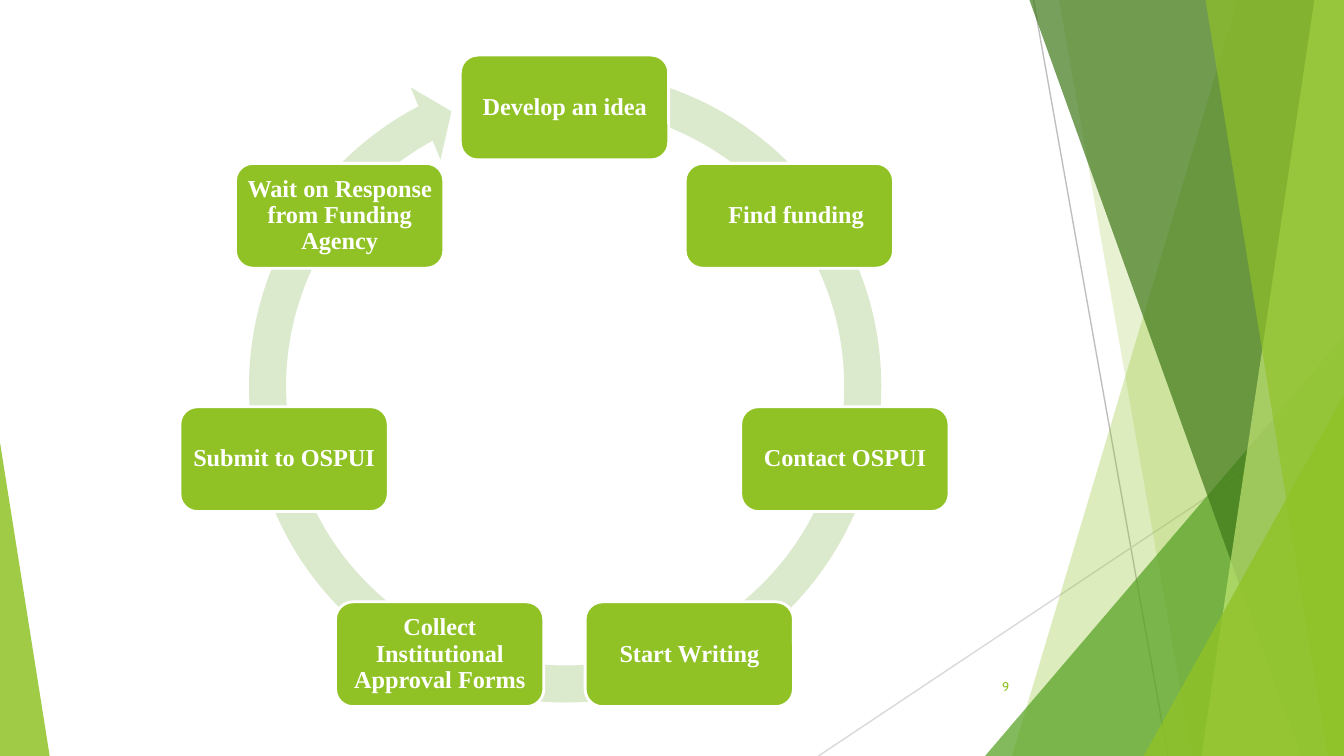
import math

from lxml import etree
from pptx import Presentation
from pptx.dml.color import RGBColor
from pptx.enum.shapes import MSO_CONNECTOR, MSO_SHAPE
from pptx.enum.text import MSO_ANCHOR, PP_ALIGN
from pptx.oxml.ns import qn
from pptx.util import Inches, Pt

STRAIGHT = MSO_CONNECTOR.STRAIGHT
TRIANGLE = MSO_SHAPE.ISOSCELES_TRIANGLE
CIRCULAR_ARROW = MSO_SHAPE.CIRCULAR_ARROW
ROUNDED = MSO_SHAPE.ROUNDED_RECTANGLE
MIDDLE = MSO_ANCHOR.MIDDLE
CENTER, RIGHT = PP_ALIGN.CENTER, PP_ALIGN.RIGHT

WIDTH = 10
HEIGHT = WIDTH * 9 / 16
LIME, GREEN, DARK_GREEN, PALE_LIME = "90C226", "54A021", "3F7819", "C0E474"
RING_GREEN, WHITE = "DBE9CD", "FFFFFF"

CENTER_X, CENTER_Y, RADIUS = 4.2, 2.94, 2.14
STEP_WIDTH, STEP_HEIGHT = 1.55, 0.78
# Label and extra left inset, clockwise from the top
STEPS = [
    ("Develop an idea", 0),
    ("Find funding", 0.1),
    ("Contact OSPUI", 0),
    ("Start Writing", 0),
    ("Collect Institutional Approval Forms", 0),
    ("Submit to OSPUI", 0),
    ("Wait on Response from Funding Agency", 0),
]


def color(hex_code):
    return RGBColor.from_string(hex_code)


def paint(shape, fill, opacity=100, outline=None):
    """Fill a shape, with an opacity in percent and an optional outline."""
    shape.shadow.inherit = False
    shape.fill.solid()
    shape.fill.fore_color.rgb = color(fill)
    if opacity < 100:
        solid = shape._element.spPr.find(qn("a:solidFill"))
        alpha = etree.SubElement(solid[0], qn("a:alpha"))
        alpha.set("val", str(opacity * 1000))
    if outline:
        shape.line.color.rgb = color(outline)
        shape.line.width = Pt(1.5)
    else:
        shape.line.fill.background()


def write(shape, text, size, font, hex_code, align, inset,
          left_extra=0, bold=False, spacing=1.0):
    frame = shape.text_frame
    frame.word_wrap = True
    frame.vertical_anchor = MIDDLE
    frame.margin_left = Inches(inset + left_extra)
    frame.margin_right = frame.margin_top = frame.margin_bottom = Inches(inset)
    paragraph = frame.paragraphs[0]
    paragraph.alignment = align
    paragraph.line_spacing = spacing
    run = paragraph.add_run()
    run.text = text
    run.font.size = Pt(size)
    run.font.name = font
    run.font.bold = bold
    run.font.color.rgb = color(hex_code)


def add_preset(slide, preset, left, top, width, height, adjustments=()):
    shape = slide.shapes.add_shape(
        preset, Inches(left), Inches(top), Inches(width), Inches(height))
    for index, value in enumerate(adjustments):
        shape.adjustments[index] = value
    return shape


def add_hairline(slide, x1, y1, x2, y2, hex_code):
    hairline = slide.shapes.add_connector(
        STRAIGHT, Inches(x1), Inches(y1), Inches(x2), Inches(y2))
    hairline.line.color.rgb = color(hex_code)
    hairline.line.width = Pt(0.75)
    etree.SubElement(hairline._element.spPr, qn("a:effectLst"))


def add_panel(slide, top_x, bottom_x, fill, opacity):
    """Add a full-height panel with a slanted left side."""
    builder = slide.shapes.build_freeform(Inches(top_x), 0)
    builder.add_line_segments([
        (Inches(WIDTH), 0),
        (Inches(WIDTH), Inches(HEIGHT)),
        (Inches(bottom_x), Inches(HEIGHT)),
    ], close=True)
    paint(builder.convert_to_shape(), fill, opacity)


def add_corner(slide, left, top, width, apex, fill, opacity):
    """Add a triangle that stands on the bottom edge of the slide."""
    corner = add_preset(slide, TRIANGLE, left, top, width, HEIGHT - top, [apex])
    paint(corner, fill, opacity)


def add_backdrop(slide):
    add_hairline(slide, 7.69, 0, 8.69, HEIGHT, "BFBFBF")
    add_hairline(slide, WIDTH, 3.02, 6.09, HEIGHT, "D9D9D9")
    add_panel(slide, 9.21, 7.53, LIME, 30)
    add_panel(slide, 7.88, 8.87, LIME, 20)
    add_corner(slide, 7.33, 2.5, 2.67, 1, GREEN, 72)
    add_panel(slide, 7.66, 9.68, DARK_GREEN, 70)
    add_panel(slide, 9.78, 8.94, PALE_LIME, 70)
    add_panel(slide, 8.97, 9.88, LIME, 65)
    add_corner(slide, 8.51, 2.94, 1.49, 1, LIME, 80)
    add_corner(slide, 0, 3.29, 0.37, 0, LIME, 85)


def add_cycle(slide):
    ring = add_preset(slide, CIRCULAR_ARROW, 1.7, 0.37, 5.01, 5.01,
                      [0.055, 3.307, 145.227, 169.463, 0.058])
    paint(ring, RING_GREEN)
    for index, (label, left_extra) in enumerate(STEPS):
        angle = math.tau * index / len(STEPS)
        left = CENTER_X + RADIUS * math.sin(angle) - STEP_WIDTH / 2
        top = CENTER_Y - RADIUS * math.cos(angle) - STEP_HEIGHT / 2
        step = add_preset(slide, ROUNDED, left, top, STEP_WIDTH, STEP_HEIGHT)
        paint(step, LIME, outline=WHITE)
        write(step, label, 13, "Times New Roman", WHITE, CENTER, 0.05,
              left_extra=left_extra, bold=True, spacing=0.9)


def add_slide_number(slide):
    number = slide.shapes.add_textbox(
        Inches(7.05), Inches(4.96), Inches(0.56), Inches(0.3))
    write(number, "9", 6.8, "Cabin", LIME, RIGHT, 0.1)


def main():
    deck = Presentation()
    deck.slide_width, deck.slide_height = Inches(WIDTH), Inches(HEIGHT)
    slide = deck.slides.add_slide(deck.slide_layouts[6])
    add_backdrop(slide)
    add_slide_number(slide)
    add_cycle(slide)
    deck.save("out.pptx")


if __name__ == "__main__":
    main()
